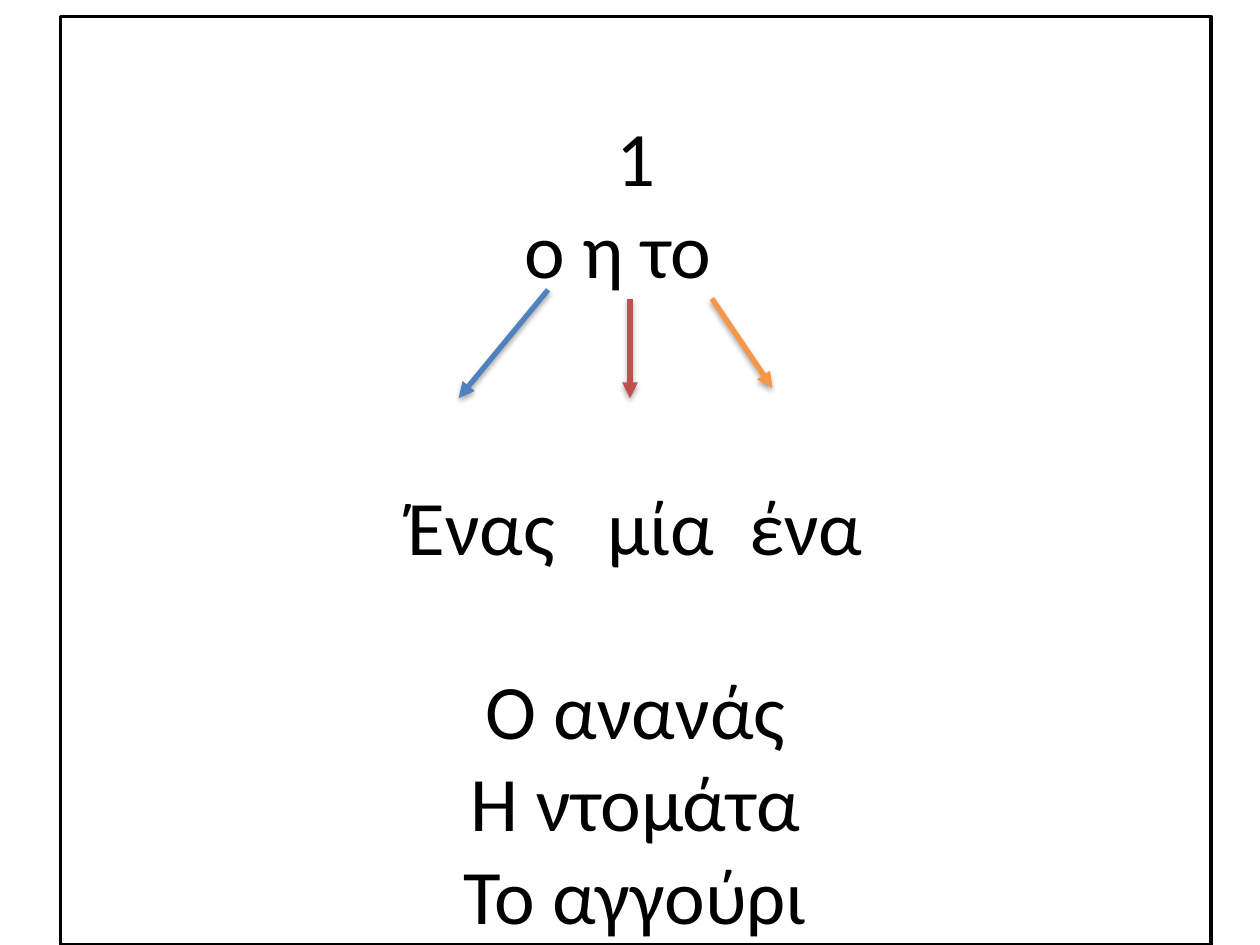
import lxml.etree
import pptx
import pptx.dml.color
import pptx.enum.shapes
import pptx.enum.text
import pptx.oxml
import pptx.oxml.ns
import pptx.util

Inches = pptx.util.Inches
Pt = pptx.util.Pt
PITCH = 52.7

LINES = [
    ("1", 0),
    ("ο η το  ", 0),
    ("Ένας   μία  ένα", 2),
    ("Ο ανανάς", 1),
    ("Η ντομάτα", 0),
    ("Το αγγούρι", 0),
]

ARROWS = [
    ((4.35, 2.3), (3.64, 3.16), "4F81BD"),
    ((5, 2.37), (5, 3.16), "C0504D"),
    ((5.65, 2.37), (6.13, 3.08), "F79646"),
]

SHADOW = """<a:effectLst xmlns:a="http://schemas.openxmlformats.org/drawingml/2006/main">
<a:outerShdw blurRad="40000" dist="23000" dir="5400000" rotWithShape="0">
<a:srgbClr val="000000"><a:alpha val="35000"/></a:srgbClr>
</a:outerShdw></a:effectLst>"""


def color(code):
    return pptx.dml.color.RGBColor.from_string(code)


def add_frame(slide):
    frame = slide.shapes.add_shape(
        pptx.enum.shapes.MSO_SHAPE.RECTANGLE,
        Inches(0.48), Inches(0.13), Inches(9.13), Inches(7.37),
    )
    frame.shadow.inherit = False
    frame.fill.solid()
    frame.fill.fore_color.rgb = color("FFFFFF")
    frame.line.color.rgb = color("000000")
    frame.line.width = Pt(2)
    return frame


def add_lines(frame, lines):
    text = frame.text_frame
    text.word_wrap = True
    text.vertical_anchor = pptx.enum.text.MSO_ANCHOR.TOP
    text.margin_top = Inches(0.74)
    text.margin_bottom = 0
    text.text = "\n".join(words for words, gap in lines)
    for para, (words, gap) in zip(text.paragraphs, lines):
        para.alignment = pptx.enum.text.PP_ALIGN.CENTER
        para.line_spacing = Pt(PITCH)
        para.space_before = Pt(gap * PITCH)
        for run in para.runs:
            run.font.name = "Calibri"
            run.font.size = Pt(44)
            run.font.color.rgb = color("000000")


def add_arrow(slide, start, end, code):
    arrow = slide.shapes.add_connector(
        pptx.enum.shapes.MSO_CONNECTOR.STRAIGHT,
        *(Inches(value) for value in start + end),
    )
    arrow.line.color.rgb = color(code)
    arrow.line.width = Pt(3)
    stroke = arrow.line._get_or_add_ln()
    lxml.etree.SubElement(stroke, pptx.oxml.ns.qn("a:tailEnd"), type="triangle")
    stroke.addnext(pptx.oxml.parse_xml(SHADOW))


def main():
    deck = pptx.Presentation()
    deck.slide_width = Inches(10)
    deck.slide_height = Inches(7.5)
    slide = deck.slides.add_slide(deck.slide_layouts[6])
    add_lines(add_frame(slide), LINES)
    for start, end, code in ARROWS:
        add_arrow(slide, start, end, code)
    deck.save("out.pptx")


if __name__ == "__main__":
    main()
